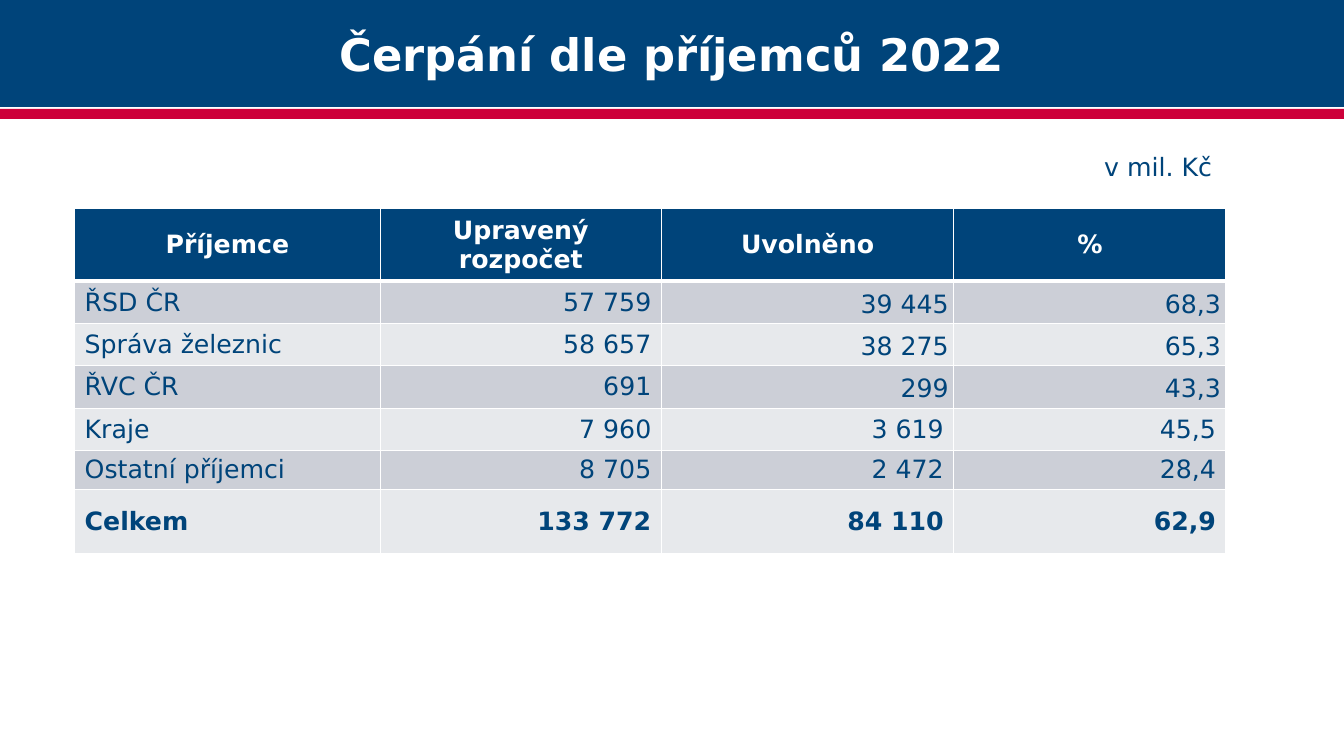
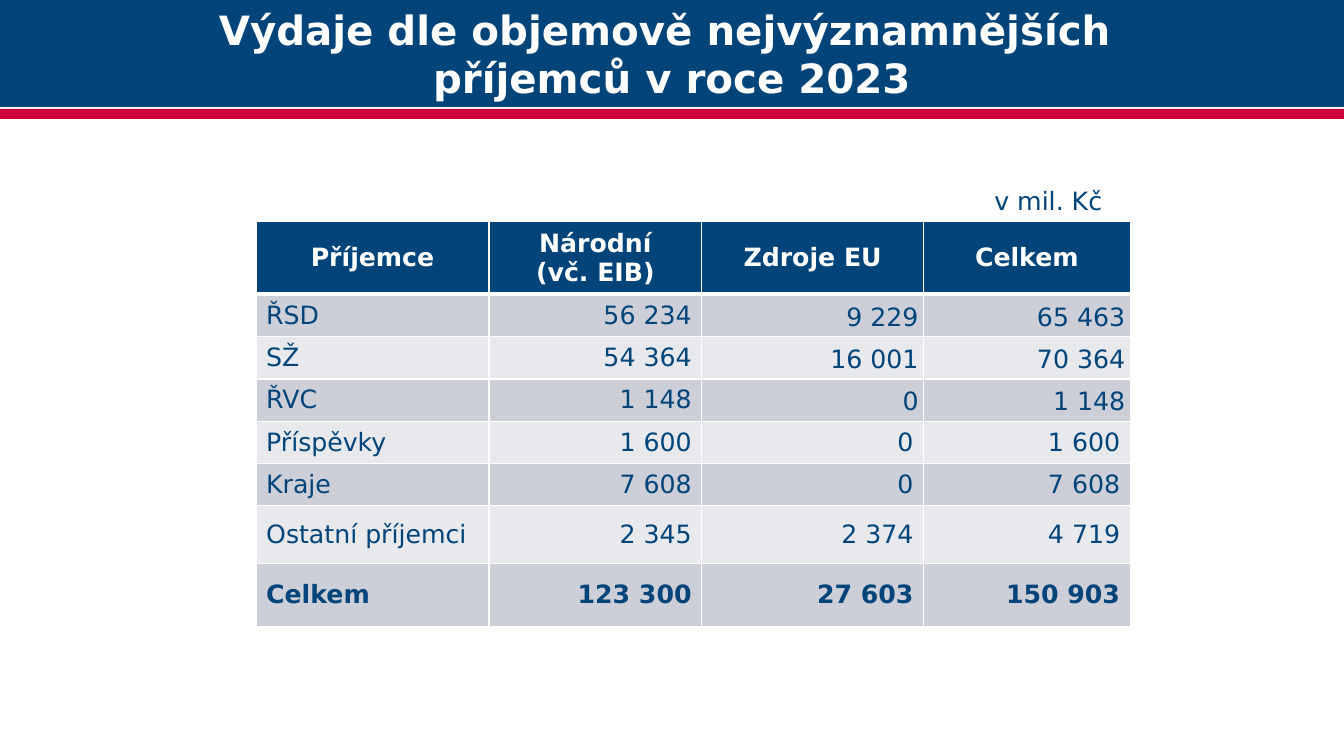
from dataclasses import dataclass

import pptx
import pptx.dml.color
import pptx.enum.shapes
import pptx.enum.text
import pptx.oxml
import pptx.oxml.ns
import pptx.slide
import pptx.table
import pptx.text.text
import pptx.util

Inches = pptx.util.Inches
Pt = pptx.util.Pt
RGBColor = pptx.dml.color.RGBColor
Align = pptx.enum.text.PP_ALIGN
Anchor = pptx.enum.text.MSO_ANCHOR
AutoSize = pptx.enum.text.MSO_AUTO_SIZE


# Shared look
@dataclass(frozen=True)
class Theme:
    font: str = "DejaVu Sans"
    navy: str = "00447A"
    red: str = "CD003A"
    white: str = "FFFFFF"
    bands: tuple[str, str] = ("CCCFD7", "E7E9EC")
    body_size: float = 18
    thin_border: float = 1
    thick_border: float = 3


THEME = Theme()
SLIDE_WIDTH = 13.33
SLIDE_HEIGHT = 7.5
TIGHT_ROWS = range(1, 4)
TIGHT_COLUMNS = range(2, 4)


@dataclass(frozen=True)
class TableSlide:
    title: str
    title_size: float
    unit_at: tuple[float, float]
    table_at: tuple[float, float]
    columns: tuple[float, ...]
    row_heights: tuple[float, ...]
    rows: tuple[tuple[str, ...], ...]


# Slide content
SLIDES = (
    TableSlide(
        title="Čerpání dle příjemců 2022",
        title_size=32,
        unit_at=(10.74, 1.45),
        table_at=(0.74, 2.07),
        columns=(3.03, 2.79, 2.9, 2.7),
        row_heights=(0.72, 0.42, 0.42, 0.42, 0.42, 0.39, 0.63),
        rows=(
            ("Příjemce", "Upravený rozpočet", "Uvolněno", "%"),
            ("ŘSD ČR", "57 759", "39 445", "68,3"),
            ("Správa železnic", "58 657", "38 275", "65,3"),
            ("ŘVC ČR", "691", "299", "43,3"),
            ("Kraje", "7 960", "3 619", "45,5"),
            ("Ostatní příjemci", "8 705", "2 472", "28,4"),
            ("Celkem", "133 772", "84 110", "62,9"),
        ),
    ),
    TableSlide(
        title="Výdaje dle objemově nejvýznamnějších \npříjemců v roce 2023",
        title_size=28.8,
        unit_at=(9.65, 1.79),
        table_at=(2.54, 2.2),
        columns=(2.31, 2.11, 2.2, 2.05),
        row_heights=(0.72, 0.42, 0.42, 0.42, 0.42, 0.42, 0.57, 0.63),
        rows=(
            ("Příjemce", "Národní\n(vč. EIB)", "Zdroje EU", "Celkem"),
            ("ŘSD", "56 234", "9 229", "65 463"),
            ("SŽ", "54 364", "16 001", "70 364"),
            ("ŘVC", "1 148", "0", "1 148"),
            ("Příspěvky", "1 600", "0", "1 600"),
            ("Kraje", "7 608", "0", "7 608"),
            ("Ostatní příjemci", "2 345", "2 374", "4 719"),
            ("Celkem", "123 300", "27 603", "150 903"),
        ),
    ),
)


def add_span(para: pptx.text.text._Paragraph, text: str, size: float,
             color: str, bold: bool = False) -> None:
    span = para.add_run()
    span.text = text
    span.font.name = THEME.font
    span.font.size = Pt(size)
    span.font.bold = bold
    span.font.color.rgb = RGBColor.from_string(color)


# Title and red band
def add_heading(page: pptx.slide.Slide, text: str, size: float) -> None:
    band = page.shapes.add_shape(
        pptx.enum.shapes.MSO_SHAPE.RECTANGLE,
        Inches(0), Inches(1.08), Inches(SLIDE_WIDTH), Inches(0.1))
    band.shadow.inherit = False
    band.fill.solid()
    band.fill.fore_color.rgb = RGBColor.from_string(THEME.red)
    band.line.fill.background()

    title = page.shapes.title
    title.left, title.top = Inches(0), Inches(0)
    title.width, title.height = Inches(SLIDE_WIDTH), Inches(1.06)
    title.fill.solid()
    title.fill.fore_color.rgb = RGBColor.from_string(THEME.navy)
    box = title.text_frame
    box.word_wrap = True
    box.auto_size = AutoSize.NONE
    box.vertical_anchor = Anchor.MIDDLE
    para = box.paragraphs[0]
    para.alignment = Align.CENTER
    for index, line in enumerate(text.split("\n")):
        if index:
            para.add_line_break()
        add_span(para, line, size, THEME.white, bold=True)


# Unit label above the table
def add_unit(page: pptx.slide.Slide, left: float, top: float) -> None:
    box = page.shapes.add_textbox(
        Inches(left), Inches(top), Inches(1.38), Inches(0.4)).text_frame
    box.word_wrap = True
    box.auto_size = AutoSize.SHAPE_TO_FIT_TEXT
    para = box.paragraphs[0]
    para.alignment = Align.RIGHT
    add_span(para, "v mil. Kč", THEME.body_size, THEME.navy)


def set_borders(cell: pptx.table._Cell, top: float, bottom: float) -> None:
    properties = cell._tc.get_or_add_tcPr()
    thin = THEME.thin_border
    for side, width in (("L", thin), ("R", thin), ("T", top), ("B", bottom)):
        properties.append(pptx.oxml.parse_xml(
            f'<a:ln{side} {pptx.oxml.ns.nsdecls("a")} w="{Pt(width)}">'
            f'<a:solidFill><a:srgbClr val="{THEME.white}"/></a:solidFill>'
            f'</a:ln{side}>'))


def fill_cell(cell: pptx.table._Cell, text: str, row: int, column: int,
              last_row: int) -> None:
    header = row == 0
    thin, thick = THEME.thin_border, THEME.thick_border
    set_borders(cell, top=thick if row == 1 else thin,
                bottom=thick if header else thin)
    cell.fill.solid()
    cell.fill.fore_color.rgb = RGBColor.from_string(
        THEME.navy if header else THEME.bands[(row - 1) % 2])
    cell.vertical_anchor = Anchor.MIDDLE
    tight = row in TIGHT_ROWS and column in TIGHT_COLUMNS
    if tight:
        cell.margin_left = cell.margin_right = Inches(0.05)
        cell.margin_top = cell.margin_bottom = Inches(0)

    for index, line in enumerate(text.split("\n")):
        box = cell.text_frame
        para = box.add_paragraph() if index else box.paragraphs[0]
        if header:
            para.alignment = Align.CENTER
        else:
            para.alignment = Align.RIGHT if column else Align.LEFT
        if tight:
            para.line_spacing = 1.15
        add_span(para, line, THEME.body_size,
                 THEME.white if header else THEME.navy,
                 bold=row in (0, last_row))


# Table of recipients
def add_recipients(page: pptx.slide.Slide, content: TableSlide) -> None:
    left, top = content.table_at
    table = page.shapes.add_table(
        len(content.rows), len(content.columns), Inches(left), Inches(top),
        Inches(sum(content.columns)), Inches(sum(content.row_heights))).table
    table.horz_banding = False
    for column, width in zip(table.columns, content.columns):
        column.width = Inches(width)
    for row, height in zip(table.rows, content.row_heights):
        row.height = Inches(height)
    for row, texts in enumerate(content.rows):
        for column, text in enumerate(texts):
            fill_cell(table.cell(row, column), text, row, column,
                      len(content.rows) - 1)


def main() -> None:
    deck = pptx.Presentation()
    deck.slide_width = Inches(SLIDE_WIDTH)
    deck.slide_height = Inches(SLIDE_HEIGHT)
    title_only = deck.slide_layouts.get_by_name("Title Only")
    for content in SLIDES:
        page = deck.slides.add_slide(title_only)
        add_heading(page, content.title, content.title_size)
        add_recipients(page, content)
        add_unit(page, *content.unit_at)
    deck.save("out.pptx")


if __name__ == "__main__":
    main()
